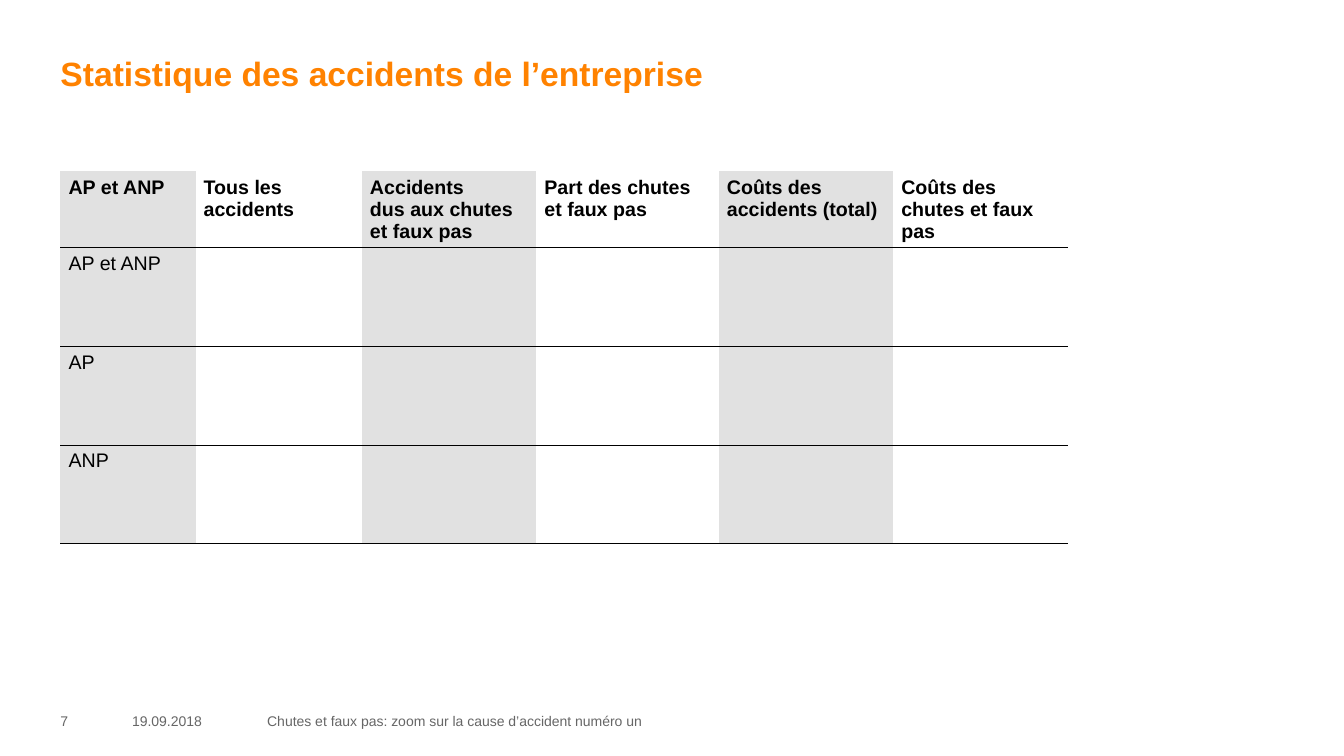
"""Build the slide with the company's accident statistics table."""
from lxml import etree
from pptx import Presentation
from pptx.dml.color import RGBColor
from pptx.enum.text import MSO_ANCHOR, MSO_AUTO_SIZE, PP_ALIGN
from pptx.oxml.ns import qn
from pptx.util import Inches, Pt

TOP, MIDDLE = MSO_ANCHOR.TOP, MSO_ANCHOR.MIDDLE
LEFT = PP_ALIGN.LEFT
NO_AUTOFIT = MSO_AUTO_SIZE.NONE
PLAIN_TABLE_STYLE = "{2D5ABB26-0587-4C30-8999-92F81FD0307C}"
ORANGE, BLACK, GREY, SHADE = "FF8200", "000000", "666666", "E1E1E1"
MARGIN = 0.6


def color(value):
    return RGBColor.from_string(value)


def write(frame, text, size, ink, anchor, bold=False):
    frame.text = text
    frame.word_wrap = True
    frame.auto_size = NO_AUTOFIT
    frame.vertical_anchor = anchor
    frame.margin_left = frame.margin_right = 0
    frame.margin_top = frame.margin_bottom = 0
    para = frame.paragraphs[0]
    para.alignment = LEFT
    font = para.runs[0].font
    font.name, font.size, font.bold = "Arial", Pt(size), bold
    font.color.rgb = color(ink)


deck = Presentation()
deck.slide_width, deck.slide_height = Inches(13.33), Inches(7.5)
page = deck.slides.add_slide(deck.slide_layouts[5])

title = page.shapes.title
title.left, title.top = Inches(MARGIN), Inches(0.52)
title.width, title.height = Inches(12.13), Inches(0.94)
write(title.text_frame, "Statistique des accidents de l’entreprise", 24, ORANGE, TOP, True)

column_widths = [1.34, 1.65, 1.73, 1.81, 1.73, 1.73]
row_heights = [0.75, 0.98, 0.98, 0.98]
headings = [
    "AP et ANP",
    "Tous les accidents",
    "Accidents \vdus aux chutes \vet faux pas",
    "Part des chutes et faux pas",
    "Coûts des accidents (total)",
    "Coûts des chutes et faux pas",
]
rows = [headings] + [[label] + [""] * 5 for label in ("AP et ANP", "AP", "ANP")]

frame = page.shapes.add_table(
    len(rows), len(headings), Inches(MARGIN), Inches(1.7),
    Inches(sum(column_widths)), Inches(sum(row_heights)))
table = frame.table
table.horz_banding = False
frame._element.find(".//" + qn("a:tableStyleId")).text = PLAIN_TABLE_STYLE
for column, width in zip(table.columns, column_widths):
    column.width = Inches(width)

for row_index, labels in enumerate(rows):
    table.rows[row_index].height = Inches(row_heights[row_index])
    for column_index, label in enumerate(labels):
        cell = table.cell(row_index, column_index)
        cell.margin_left = cell.margin_right = Inches(0.08)
        cell.margin_top = cell.margin_bottom = Inches(0.05)
        if column_index % 2 == 0:
            cell.fill.solid()
            cell.fill.fore_color.rgb = color(SHADE)
        else:
            cell.fill.background()
        border = etree.Element(qn("a:lnB"), w=str(Pt(0.67)))
        ink = etree.SubElement(etree.SubElement(border, qn("a:solidFill")), qn("a:srgbClr"))
        ink.set("val", BLACK)
        cell._tc.get_or_add_tcPr().insert(0, border)
        cell.text = label
        for span in cell.text_frame.paragraphs[0].runs:
            span.font.name, span.font.size = "Arial", Pt(14)
            span.font.bold = row_index == 0
            span.font.color.rgb = color(BLACK)

footers = [
    (MARGIN, 0.55, "7"),
    (1.31, 1.18, "19.09.2018"),
    (2.65, 8.58, "Chutes et faux pas: zoom sur la cause d’accident numéro un"),
]
for left, width, text in footers:
    box = page.shapes.add_textbox(Inches(left), Inches(7.05), Inches(width), Inches(0.2))
    write(box.text_frame, text, 10, GREY, MIDDLE)

deck.save("out.pptx")
